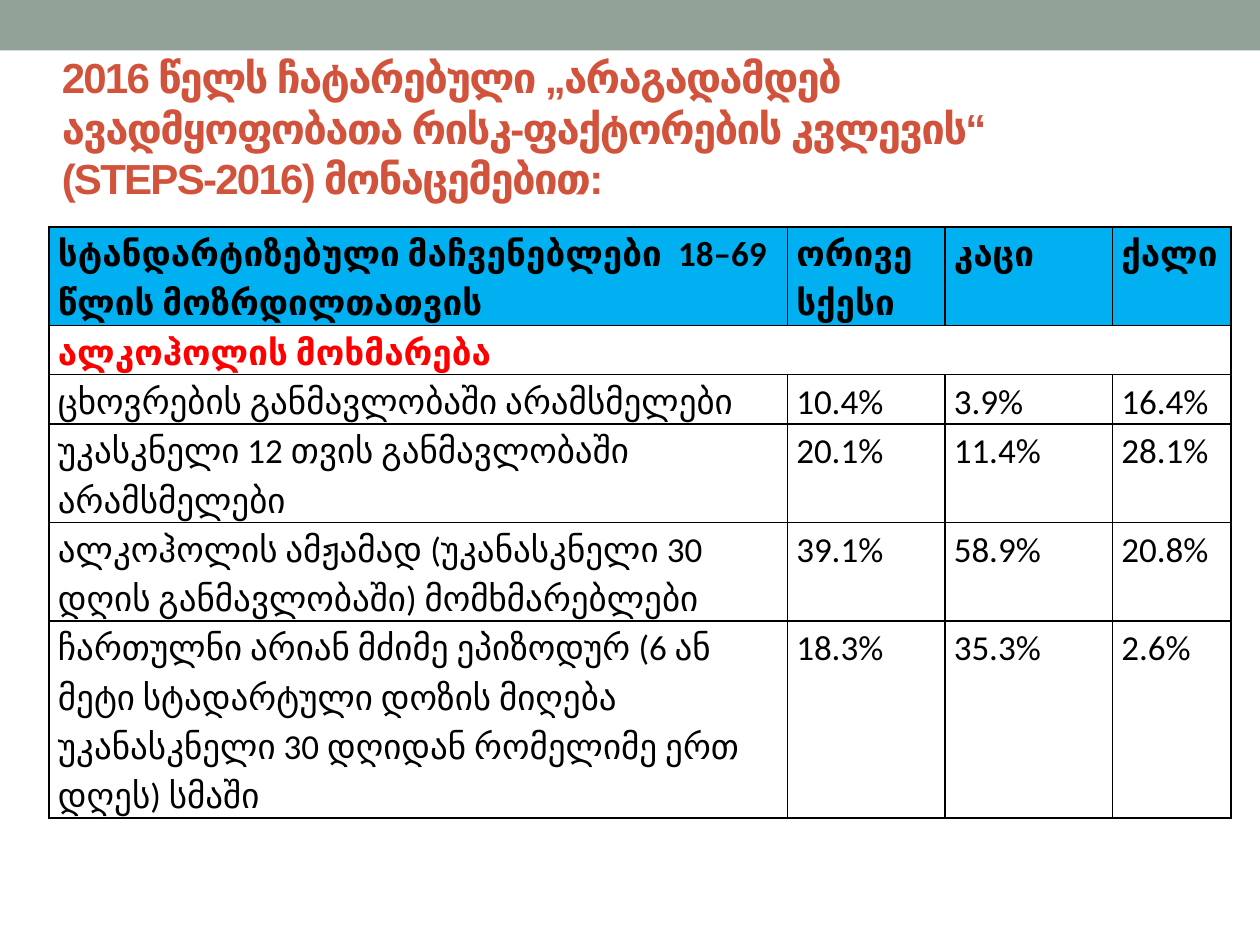
from dataclasses import dataclass

from lxml.etree import SubElement
from pptx import Presentation
from pptx.dml.color import RGBColor as RGB
from pptx.enum.shapes import MSO_SHAPE as Shape
from pptx.enum.text import MSO_ANCHOR as Anchor, PP_ALIGN as Align
from pptx.oxml.ns import qn
from pptx.util import Inches, Pt

TITLE = ("2016 წელს ჩატარებული „არაგადამდებ ავადმყოფობათა "
         "რისკ-ფაქტორების კვლევის“ (STEPS-2016) მონაცემებით:")
HEAD = ("სტანდარტიზებული მაჩვენებლები  18–69 წლის მოზრდილთათვის",
        "ორივე სქესი", "კაცი", "ქალი")
GROUP = ("ალკოჰოლის მოხმარება", "", "", "")
RATES = [
    ("ცხოვრების განმავლობაში არამსმელები", "10.4%", "3.9%", "16.4%"),
    ("უკასკნელი 12 თვის განმავლობაში არამსმელები",
     "20.1%", "11.4%", "28.1%"),
    ("ალკოჰოლის ამჟამად (უკანასკნელი 30 დღის განმავლობაში) მომხმარებლები",
     "39.1%", "58.9%", "20.8%"),
    ("ჩართულნი არიან მძიმე ეპიზოდურ (6 ან მეტი სტადარტული დოზის მიღება "
     "უკანასკნელი 30 დღიდან რომელიმე ერთ დღეს) სმაში",
     "18.3%", "35.3%", "2.6%"),
]
ROWS = [HEAD, GROUP, *RATES]
LINES = [2, 1, 1, 2, 2, 4]  # text lines in each row
COLS = [5.86, 1.25, 1.33, 0.94]
LINE_H = 0.39


@dataclass(frozen=True)
class Theme:
    band: RGB = RGB(0x93, 0xA2, 0x99)
    title: RGB = RGB(0xD2, 0x53, 0x3C)
    head: RGB = RGB(0x00, 0xB0, 0xF0)
    group: RGB = RGB(0xFF, 0x00, 0x00)
    ink: RGB = RGB(0x00, 0x00, 0x00)
    title_font: str = "Arial"
    body_font: str = "Calibri"
    title_size: int = 24
    body_size: int = 20


THEME = Theme()


def style(para, name, size, color, bold):
    font = para.font
    font.name, font.size, font.bold = name, Pt(size), bold
    font.color.rgb = color
    return font


def add_band(slide):
    band = slide.shapes.add_shape(Shape.RECTANGLE, 0, 0, Inches(10), Inches(0.4))
    band.shadow.inherit = False
    band.fill.solid()
    band.fill.fore_color.rgb = THEME.band
    band.line.fill.background()


def set_title(slide):
    title = slide.shapes.title
    title.left, title.top = Inches(0.39), Inches(0.47)
    title.width, title.height = Inches(9), Inches(1.08)
    frame = title.text_frame
    frame.text = TITLE
    frame.word_wrap = True
    frame.vertical_anchor = Anchor.MIDDLE
    para = frame.paragraphs[0]
    para.alignment = Align.LEFT
    style(para, THEME.title_font, THEME.title_size, THEME.title, True)
    para.runs[0].font._element.set("spc", "-100")


def add_borders(cell):
    props = cell._tc.get_or_add_tcPr()
    for side in ("lnL", "lnR", "lnT", "lnB"):
        line = SubElement(props, qn(f"a:{side}"), w=str(Pt(1)))
        fill = SubElement(line, qn("a:solidFill"))
        SubElement(fill, qn("a:srgbClr"), val=str(THEME.ink))


def fill_cell(cell, text, row):
    cell.margin_left = cell.margin_right = Inches(0.07)
    cell.margin_top = cell.margin_bottom = 0
    add_borders(cell)
    if row == 0:
        cell.fill.solid()
        cell.fill.fore_color.rgb = THEME.head
    else:
        cell.fill.background()
    cell.text = text
    para = cell.text_frame.paragraphs[0]
    para.line_spacing = 1.15
    color = THEME.group if row == 1 else THEME.ink
    style(para, THEME.body_font, THEME.body_size, color, row < 2)


def add_rates(slide):
    table = slide.shapes.add_table(
        len(ROWS), len(COLS), Inches(0.39), Inches(1.8),
        Inches(sum(COLS)), Inches(LINE_H * sum(LINES))).table
    table.first_row = table.horz_banding = False
    for col, width in zip(table.columns, COLS):
        col.width = Inches(width)
    for row, lines in zip(table.rows, LINES):
        row.height = Inches(LINE_H * lines)
    for r, texts in enumerate(ROWS):
        for c, text in enumerate(texts):
            fill_cell(table.cell(r, c), text, r)
    table.cell(1, 0).merge(table.cell(1, len(COLS) - 1))


def main():
    deck = Presentation()
    deck.slide_width, deck.slide_height = Inches(10), Inches(7.5)
    slide = deck.slides.add_slide(deck.slide_layouts[5])
    add_band(slide)
    set_title(slide)
    add_rates(slide)
    deck.save("out.pptx")


if __name__ == "__main__":
    main()
